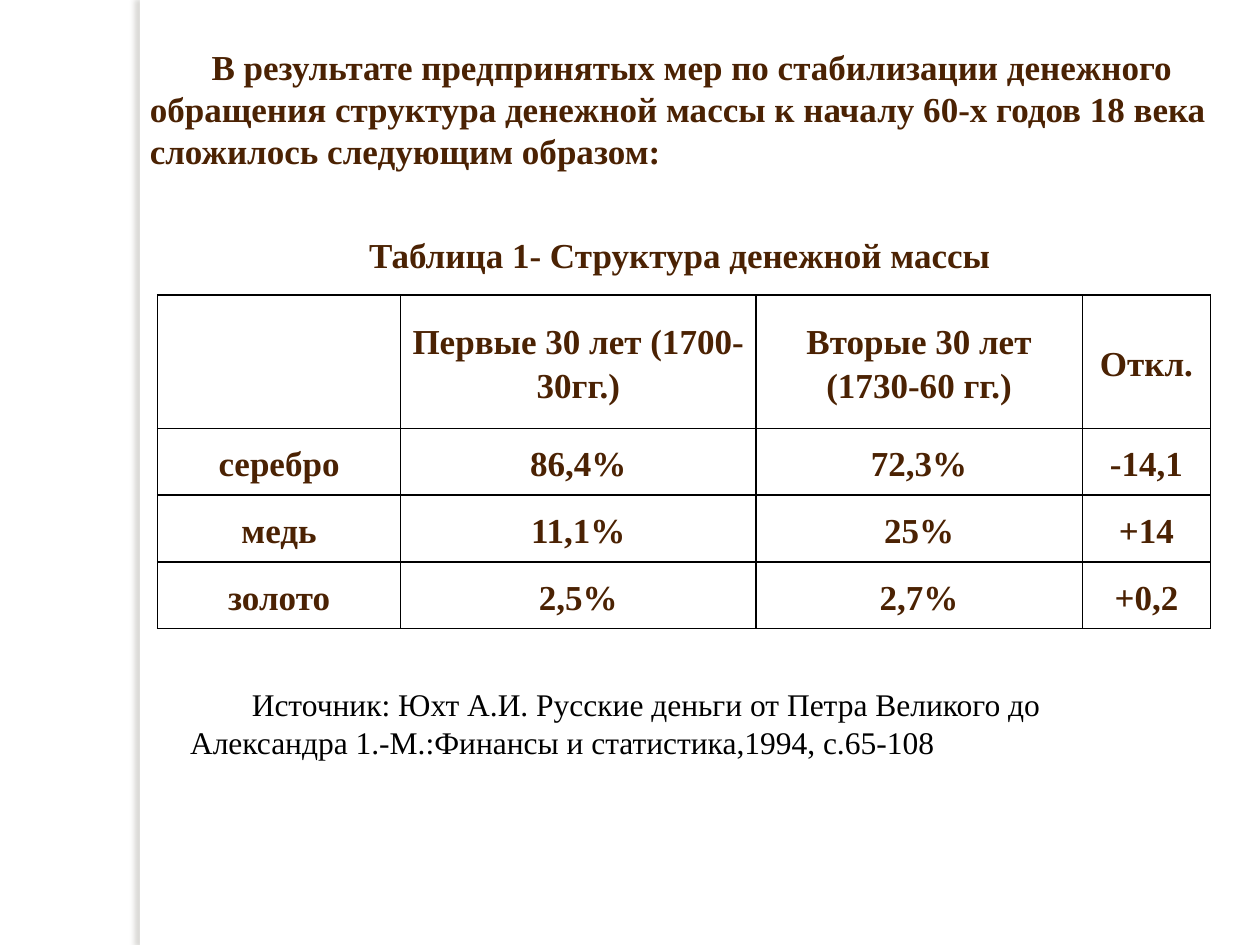
import lxml.etree
import pptx
import pptx.dml.color
import pptx.enum.shapes
import pptx.enum.text
import pptx.oxml
import pptx.oxml.ns
import pptx.util

Inches = pptx.util.Inches
Pt = pptx.util.Pt
ANCHOR = pptx.enum.text.MSO_ANCHOR
ALIGN = pptx.enum.text.PP_ALIGN
NAMESPACE = pptx.oxml.ns.nsdecls("a")

# Content
COLORS = {"brown": "4B2203", "black": "000000", "white": "FFFFFF", "shadow": "736F63"}
FONT = "Times New Roman"
INDENT = 0.49

INTRO = ("В результате предпринятых мер по стабилизации денежного обращения "
         "структура денежной массы к началу 60-х годов 18 века сложилось "
         "следующим образом:")
CAPTION = "Таблица 1- Структура денежной массы"
SOURCE = ("Источник: Юхт А.И. Русские деньги от Петра Великого до Александра "
          "1.-М.:Финансы и статистика,1994, с.65-108")
# text, box, size, color, bold, anchor, bottom inset
TEXTS = [
    (INTRO, (1.09, 0.31, 8.59, 1.11), 20, "brown", True, ANCHOR.MIDDLE, 0.05),
    (CAPTION, (2.34, 1.8, 6.22, 0.39), 20, "brown", True, ANCHOR.MIDDLE, 0),
    (SOURCE, (1.41, 5.39, 7.58, 0.71), 18, "black", False, ANCHOR.TOP, 0.05),
]

MONEY_ROWS = [
    ("", "Первые 30 лет (1700-30гг.)", "Вторые 30 лет (1730-60 гг.)", "Откл."),
    ("серебро", "86,4%", "72,3%", "-14,1"),
    ("медь", "11,1%", "25%", "+14"),
    ("золото", "2,5%", "2,7%", "+0,2"),
]
COLUMN_WIDTHS = [1.93, 2.82, 2.59, 1.02]
ROW_HEIGHTS = [1.06, 0.53, 0.53, 0.53]


def rgb(name):
    return pptx.dml.color.RGBColor.from_string(COLORS[name])


def set_font(font, size, color, bold):
    font.name, font.size, font.bold = FONT, Pt(size), bold
    font.color.rgb = rgb(color)


def add_side_strip(slide):
    strip = slide.shapes.add_shape(pptx.enum.shapes.MSO_SHAPE.RECTANGLE,
                                   Inches(1.11), 0, Inches(0.08), Inches(7.5))
    strip.fill.solid()
    strip.fill.fore_color.rgb = rgb("white")
    strip.line.fill.background()
    strip.shadow.inherit = False
    effects = strip.element.spPr.find(pptx.oxml.ns.qn("a:effectLst"))
    effects.append(pptx.oxml.parse_xml(
        f'<a:outerShdw {NAMESPACE} blurRad="{Pt(3)}" dist="{Pt(3)}" dir="10800000" '
        f'algn="ctr" rotWithShape="0"><a:srgbClr val="{COLORS["shadow"]}">'
        '<a:alpha val="25000"/></a:srgbClr></a:outerShdw>'))


def add_text(slide, text, box, size, color, bold, anchor, bottom):
    frame = slide.shapes.add_textbox(*map(Inches, box)).text_frame
    frame.word_wrap = True
    frame.auto_size = pptx.enum.text.MSO_AUTO_SIZE.SHAPE_TO_FIT_TEXT
    frame.vertical_anchor = anchor
    frame.margin_bottom = Inches(bottom)
    frame.text = text
    paragraph = frame.paragraphs[0]
    properties = paragraph._p.get_or_add_pPr()
    properties.set("marL", "0")
    properties.set("indent", str(Inches(INDENT)))
    set_font(paragraph.runs[0].font, size, color, bold)


def format_cell(cell, text):
    properties = cell._tc.get_or_add_tcPr()
    for side in ("lnL", "lnR", "lnT", "lnB"):
        properties.append(pptx.oxml.parse_xml(
            f'<a:{side} {NAMESPACE} w="{Pt(1)}"><a:solidFill>'
            f'<a:srgbClr val="{COLORS["black"]}"/></a:solidFill></a:{side}>'))
    cell.fill.background()
    cell.vertical_anchor = ANCHOR.MIDDLE
    cell.margin_left = cell.margin_right = Inches(0.07)
    cell.margin_top = cell.margin_bottom = 0
    cell.text = text
    paragraph = cell.text_frame.paragraphs[0]
    paragraph.alignment = ALIGN.CENTER
    paragraph.line_spacing = 1.15
    set_font(paragraph.font, 20, "brown", True)
    for run in paragraph.runs:
        set_font(run.font, 20, "brown", True)


def add_money_table(slide):
    table = slide.shapes.add_table(
        len(ROW_HEIGHTS), len(COLUMN_WIDTHS), Inches(1.25), Inches(2.34),
        Inches(sum(COLUMN_WIDTHS)), Inches(sum(ROW_HEIGHTS))).table
    table.first_row = table.horz_banding = False
    for column, width in zip(table.columns, COLUMN_WIDTHS):
        column.width = Inches(width)
    for row, height, texts in zip(table.rows, ROW_HEIGHTS, MONEY_ROWS):
        row.height = Inches(height)
        for cell, text in zip(row.cells, texts):
            format_cell(cell, text)


def main():
    presentation = pptx.Presentation()
    presentation.slide_width, presentation.slide_height = Inches(10), Inches(7.5)
    slide = presentation.slides.add_slide(presentation.slide_layouts[6])
    slide.background.fill.solid()
    slide.background.fill.fore_color.rgb = rgb("white")

    add_side_strip(slide)
    add_money_table(slide)
    for entry in TEXTS:
        add_text(slide, *entry)
    presentation.save("out.pptx")


if __name__ == "__main__":
    main()
